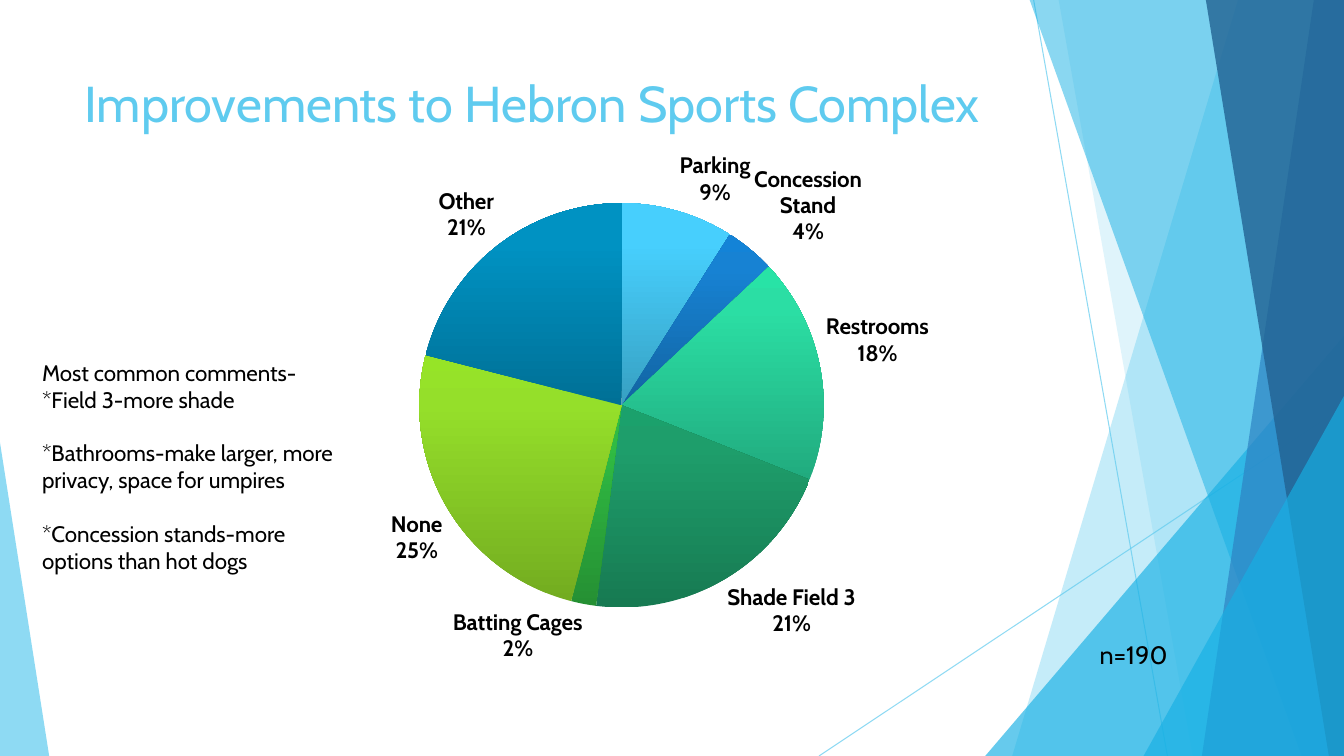
from copy import deepcopy

from lxml import etree
from pptx import Presentation
from pptx.chart.data import CategoryChartData
from pptx.dml.color import RGBColor
from pptx.enum.chart import XL_CHART_TYPE, XL_LABEL_POSITION
from pptx.enum.shapes import MSO_CONNECTOR, MSO_SHAPE
from pptx.oxml.ns import qn
from pptx.util import Cm, Pt

PIE = XL_CHART_TYPE.PIE
OUTSIDE_END = XL_LABEL_POSITION.OUTSIDE_END
STRAIGHT = MSO_CONNECTOR.STRAIGHT
TRIANGLE = MSO_SHAPE.ISOSCELES_TRIANGLE

WIDTH, HEIGHT = 33.87, 19.05
FONT = "Cabin"
BLACK, SKY, CYAN = "000000", "5FCBEF", "17B0E4"

# Band edges as distances from the right side: top, bottom, colour, opacity
BACK_BANDS = [(2.67, 8.36, SKY, 36), (7.19, 3.81, SKY, 20)]
FRONT_BANDS = [(7.92, 1.07, CYAN, 50), (0.76, 3.58, "2E83C3", 70),
               (3.48, 0.38, "226292", 80)]

# Category, percentage, gradient colours from bottom to top
SLICES = [
    ("Parking", 9, ("37A0C2", "47CFFD", "46D1FF")),
    ("Concession Stand", 4, ("1264A2", "1782D3", "1383D7")),
    ("Restrooms", 18, ("21AB7E", "2BDEA4", "28E3A6")),
    ("Shade Field 3", 21, ("177A52", "1E9E6B", "1BA16C")),
    ("Batting Cages", 2, ("259033", "30BB43", "2EBE41")),
    ("None", 25, ("73AC20", "95DF2A", "96E427")),
    ("Other", 21, ("007096", "0092C2", "0092C3")),
]
GRADIENT_POSITIONS = (0, 0.8, 1)

COMMENTS = [
    "*Field 3-more shade",
    "*Bathrooms-make larger, more privacy, space for umpires",
    "*Concession stands-more options than hot dogs",
]


def color(hex_string):
    return RGBColor.from_string(hex_string)


def set_opacity(fill_owner, percent):
    for node in fill_owner.iter(qn("a:srgbClr")):
        etree.SubElement(node, qn("a:alpha"), val=str(percent * 1000))


def paint(shape, hex_string, opacity):
    shape.shadow.inherit = False
    shape.fill.solid()
    shape.fill.fore_color.rgb = color(hex_string)
    shape.line.fill.background()
    set_opacity(shape._element.spPr, opacity)


def add_text(slide, box, text, size=16, hex_string=BLACK, gaps=()):
    """Write one paragraph per line; gaps lists the paragraphs with space above."""
    frame = slide.shapes.add_textbox(*map(Cm, box)).text_frame
    frame.word_wrap = True
    frame.text = text
    for index, paragraph in enumerate(frame.paragraphs):
        paragraph.font.size = Pt(size)
        paragraph.font.name = FONT
        paragraph.font.color.rgb = color(hex_string)
        if index in gaps:
            paragraph.space_before = Pt(size * 1.2)


def add_hairline(slide, *ends):
    line = slide.shapes.add_connector(STRAIGHT, *map(Cm, ends))
    line.line.color.rgb = color(SKY)
    line.line.width = Pt(0.75)
    properties = line._element.spPr
    set_opacity(properties, 70)
    etree.SubElement(properties, qn("a:effectLst"))


def add_triangle(slide, box, apex, hex_string, opacity):
    triangle = slide.shapes.add_shape(TRIANGLE, *map(Cm, box))
    triangle.adjustments[0] = apex
    paint(triangle, hex_string, opacity)


def add_bands(slide, box, bands):
    left, top, width, height = box
    right, bottom = left + width, top + height
    for top_inset, bottom_inset, hex_string, opacity in bands:
        builder = slide.shapes.build_freeform(Cm(right - top_inset), Cm(top))
        builder.add_line_segments([
            (Cm(right), Cm(top)), (Cm(right), Cm(bottom)),
            (Cm(right - bottom_inset), Cm(bottom))])
        paint(builder.convert_to_shape(), hex_string, opacity)


def add_decoration(slide, box):
    left, top, width, height = box
    right, bottom = left + width, top + height
    add_hairline(slide, right - 7.82, top, right - 4.45, bottom)
    add_hairline(slide, right, top + 10.24, right - 13.23, bottom)
    add_bands(slide, box, BACK_BANDS)
    add_triangle(slide, (right - 9.04, bottom - 10.59, 9.04, 10.59), 1, CYAN, 66)
    add_bands(slide, box, FRONT_BANDS)
    add_triangle(slide, (right - 5.05, bottom - 9.07, 5.05, 9.07), 1, CYAN, 66)
    # Wedge in the lower left corner
    add_triangle(slide, (left, bottom - 7.9, 1.24, 7.9), 0, SKY, 70)


def paint_slice(point, colors):
    fill = point.format.fill
    fill.gradient()
    fill.gradient_angle = 90
    first_stop = fill.gradient_stops[0]._gs
    first_stop.addnext(deepcopy(first_stop))
    for stop, position, hex_string in zip(fill.gradient_stops, GRADIENT_POSITIONS, colors):
        stop.position = position
        stop.color.rgb = color(hex_string)
    point.format.line.fill.background()


def set_plot_layout(chart, **fractions):
    plot_area = chart._chartSpace.find(".//" + qn("c:plotArea"))
    layout = plot_area.find(qn("c:layout"))
    if layout is None:
        layout = etree.Element(qn("c:layout"))
        plot_area.insert(0, layout)
    manual = etree.SubElement(layout, qn("c:manualLayout"))
    settings = {"layoutTarget": "inner", "xMode": "edge", "yMode": "edge", **fractions}
    for name, value in settings.items():
        etree.SubElement(manual, qn("c:" + name), val=str(value))


def add_pie(slide, box):
    names, values, gradients = zip(*SLICES)
    data = CategoryChartData()
    data.categories = names
    data.add_series("Series 1", values)
    chart = slide.shapes.add_chart(PIE, *map(Cm, box), data).chart
    chart.has_title = False
    chart.has_legend = False
    chart.font.name = FONT
    chart.font.size = Pt(10)
    chart.font.color.rgb = color(BLACK)
    set_plot_layout(chart, x=0.21, y=0.125, w=0.53, h=0.73)

    plot = chart.plots[0]
    plot.vary_by_categories = True
    for index, colors in enumerate(gradients):
        paint_slice(plot.series[0].points[index], colors)

    # Category and share on separate lines
    labels = plot.series[0].data_labels
    labels.show_value = False
    labels.show_category_name = True
    labels.show_percentage = True
    labels.number_format = "0%"
    labels.number_format_is_linked = False
    labels.position = OUTSIDE_END
    labels.font.name = FONT
    labels.font.size = Pt(16)
    labels.font.bold = True
    labels.font.color.rgb = color(BLACK)
    separator = etree.Element(qn("c:separator"))
    separator.text = "\n"
    labels._element.find(qn("c:showBubbleSize")).addnext(separator)


def main():
    presentation = Presentation()
    presentation.slide_width = Cm(WIDTH)
    presentation.slide_height = Cm(HEIGHT)
    slide = presentation.slides.add_slide(presentation.slide_layouts[6])
    add_decoration(slide, (0, 0, WIDTH, HEIGHT))
    add_text(slide, (1.88, 1.7, 23.88, 3.66), "Improvements to Hebron Sports Complex",
             size=36, hex_string=SKY)
    add_text(slide, (27.46, 15.98, 3.4, 1.02), "n=190", size=18)
    add_pie(slide, (6.53, 3.33, 19.23, 14.05))
    add_text(slide, (0.81, 8.92, 8.2, 6.4),
             "\n".join(["Most common comments-", *COMMENTS]), gaps=(2, 3))
    presentation.save("out.pptx")


if __name__ == "__main__":
    main()
